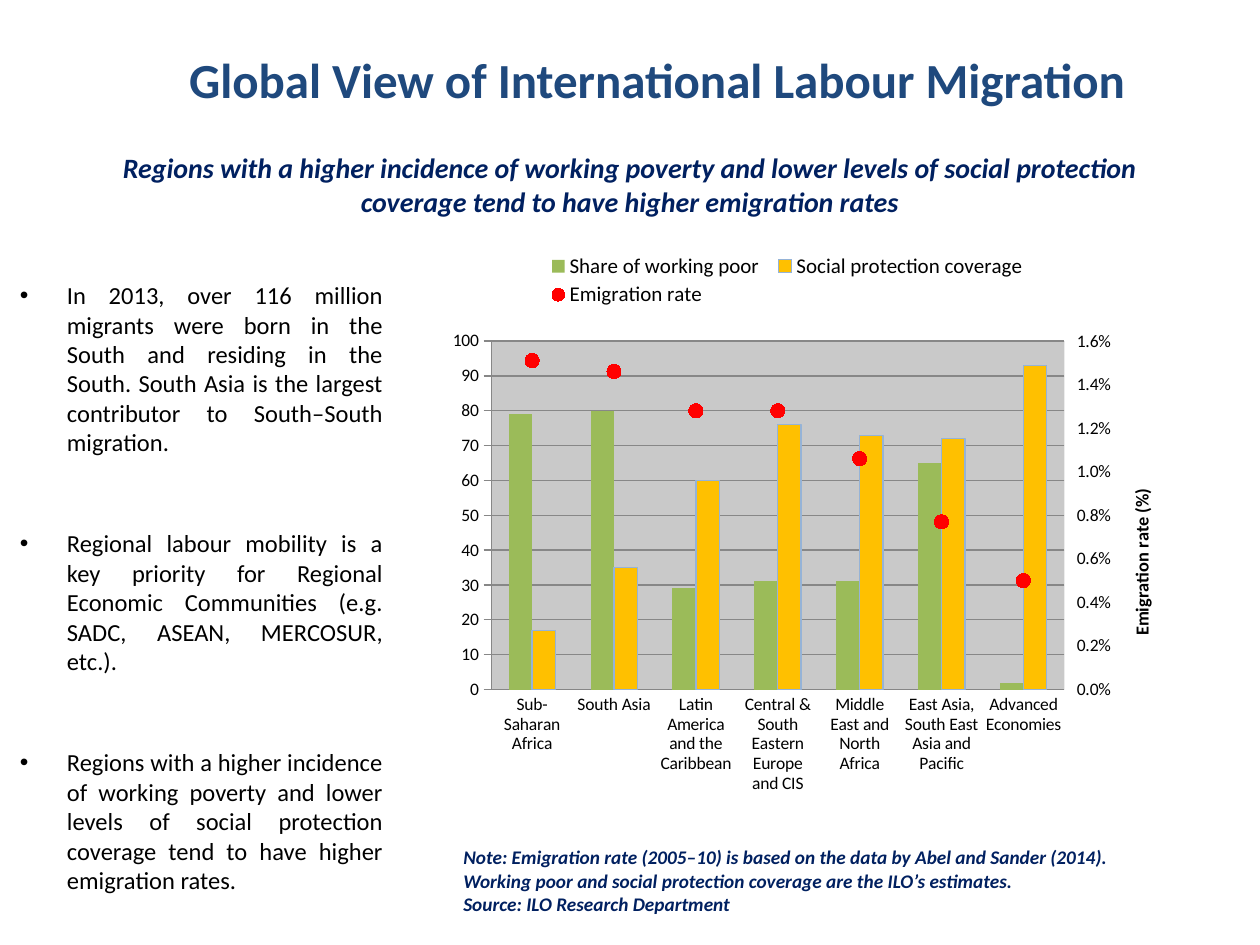
from copy import deepcopy

from pptx import Presentation
from pptx.chart.axis import CategoryAxis, ValueAxis
from pptx.chart.data import CategoryChartData
from pptx.dml.color import RGBColor
from pptx.enum.chart import XL_CHART_TYPE, XL_LEGEND_POSITION, XL_MARKER_STYLE, XL_TICK_MARK
from pptx.enum.text import MSO_ANCHOR, PP_ALIGN
from pptx.oxml import parse_xml
from pptx.oxml.ns import nsdecls, qn
from pptx.util import Cm, Pt

BLACK = RGBColor(0x00, 0x00, 0x00)
BLUE = RGBColor(0x1F, 0x49, 0x7D)
NAVY = RGBColor(0x00, 0x20, 0x60)
GREEN = RGBColor(0x9B, 0xBB, 0x59)
AMBER = RGBColor(0xFF, 0xC0, 0x00)
PALE_BLUE = RGBColor(0x95, 0xB3, 0xD7)
RED = RGBColor(0xFF, 0x00, 0x00)
GREY = RGBColor(0x86, 0x86, 0x86)

FINDINGS = [
    "In 2013, over 116 million migrants were born in the South and residing in the South. "
    "South Asia is the largest contributor to South–South migration.",
    "Regional labour mobility is a key priority for Regional Economic Communities "
    "(e.g. SADC, ASEAN, MERCOSUR, etc.).",
    "Regions with a higher incidence of working poverty and lower levels of social "
    "protection coverage tend to have higher emigration rates.",
]
NOTES = [
    "Note: Emigration rate (2005–10) is based on the data by Abel and Sander (2014).",
    "Working poor and social protection coverage are the ILO’s estimates.",
    "Source: ILO Research Department",
]
REGIONS = [
    "Sub-Saharan Africa", "South Asia", "Latin America and the Caribbean",
    "Central & South Eastern Europe and CIS", "Middle East and North Africa",
    "East Asia, South East Asia and Pacific", "Advanced Economies",
]
WORKING_POOR = [79, 80, 29, 31, 31, 65, 2]
PROTECTION = [17, 35, 60, 76, 73, 72, 93]
EMIGRATION = [0.0151, 0.0146, 0.0128, 0.0128, 0.0106, 0.0077, 0.005]


def set_layout(parent, x, y, w, h, inner=False):
    """Place a legend or plot area by fractions of the chart's size."""
    for old in parent.findall(qn("c:layout")):
        parent.remove(old)
    target = '<c:layoutTarget val="inner"/>' if inner else ""
    layout = parse_xml(
        f'<c:layout {nsdecls("c")}><c:manualLayout>{target}'
        '<c:xMode val="edge"/><c:yMode val="edge"/>'
        f'<c:x val="{x}"/><c:y val="{y}"/><c:w val="{w}"/><c:h val="{h}"/>'
        "</c:manualLayout></c:layout>")
    parent.insert(0 if inner else 1, layout)


def move_to_right_axis(chart):
    """Turn the last series into a line on a second axis; return that axis."""
    area = chart._chartSpace.chart.plotArea
    bars = area.find(qn("c:barChart"))
    rate = bars.findall(qn("c:ser"))[-1]
    for bar_only in rate.findall(qn("c:invertIfNegative")):
        rate.remove(bar_only)
    lines = parse_xml(
        f'<c:lineChart {nsdecls("c")}><c:grouping val="standard"/><c:varyColors val="0"/>'
        '<c:marker val="1"/><c:axId val="5001"/><c:axId val="5002"/></c:lineChart>')
    lines.insert(2, rate)
    bars.addnext(lines)

    left = area.find(qn("c:valAx"))
    right, hidden = deepcopy(left), deepcopy(area.find(qn("c:catAx")))
    for axis, own, crossed in ((right, "5002", "5001"), (hidden, "5001", "5002")):
        axis.find(qn("c:axId")).set("val", own)
        axis.find(qn("c:crossAx")).set("val", crossed)
    right.find(qn("c:axPos")).set("val", "r")
    right.find(qn("c:crosses")).set("val", "max")
    left.addnext(right)
    right.addnext(hidden)
    CategoryAxis(hidden).visible = False
    return ValueAxis(right)


class SlideBuilder:
    font = "Calibri"

    def __init__(self, slide):
        self.slide = slide

    def style(self, font, size, color, bold=False, italic=False):
        font.name, font.size, font.bold, font.italic = self.font, Pt(size), bold, italic
        font.color.rgb = color

    def text(self, box, lines, size, color, bold=False, italic=False,
             align=PP_ALIGN.LEFT, margins=(0.25, 0.13)):
        """Add a text box; margins are (side, top) in centimetres."""
        frame = self.slide.shapes.add_textbox(*map(Cm, box)).text_frame
        frame.word_wrap = True
        frame.vertical_anchor = MSO_ANCHOR.TOP
        frame.margin_left = frame.margin_right = Cm(margins[0])
        frame.margin_top = Cm(margins[1])
        frame.text = "\n".join(lines)
        for paragraph in frame.paragraphs:
            paragraph.alignment = align
            for run in paragraph.runs:
                self.style(run.font, size, color, bold, italic)
        return frame

    def heading(self, box, title, subtitle):
        frame = self.text(box, [title, subtitle], 16, NAVY, bold=True, italic=True,
                          align=PP_ALIGN.CENTER, margins=(0.25, 0.25))
        top, below = frame.paragraphs
        self.style(top.runs[0].font, 28, BLUE, bold=True)
        top._p.get_or_add_pPr().set("marL", str(Cm(1.09)))
        below.space_before = Pt(24.4)

    def bullets(self, box, items):
        frame = self.text(box, items, 14, BLACK, align=PP_ALIGN.JUSTIFY, margins=(0.25, 1.36))
        for paragraph in frame.paragraphs:
            paragraph.space_after = Pt(41)
            properties = paragraph._p.get_or_add_pPr()
            properties.set("marL", str(Cm(0.95)))
            properties.set("indent", str(-Cm(0.95)))
            properties.append(parse_xml(f'<a:buFont {nsdecls("a")} typeface="Arial"/>'))
            properties.append(parse_xml(f'<a:buChar {nsdecls("a")} char="•"/>'))

    def value_axis(self, axis, title, top, step, number_format):
        axis.minimum_scale, axis.maximum_scale, axis.major_unit = 0, top, step
        axis.major_tick_mark = XL_TICK_MARK.OUTSIDE
        axis.format.line.fill.background()
        axis.tick_labels.number_format = number_format
        axis.tick_labels.number_format_is_linked = False
        frame = axis.axis_title.text_frame
        frame.text = title
        frame._txBody.bodyPr.set("rot", "-5400000")
        frame._txBody.bodyPr.set("vert", "horz")
        self.style(frame.paragraphs[0].runs[0].font, 10.5, BLACK, bold=True)

    def migration_chart(self, box):
        data = CategoryChartData(number_format="0")
        data.categories = REGIONS
        data.add_series("Share of working poor", WORKING_POOR)
        data.add_series("Social protection coverage", PROTECTION)
        data.add_series("Emigration rate", EMIGRATION, number_format="0.0%")
        chart = self.slide.shapes.add_chart(
            XL_CHART_TYPE.COLUMN_CLUSTERED, *map(Cm, box), data).chart
        self.style(chart.font, 10, BLACK)
        chart.has_title = False

        right_axis = move_to_right_axis(chart)
        self.value_axis(chart.value_axis, "Working poor and social protection coverage (%)",
                        100, 25, "0")
        self.value_axis(right_axis, "Emigration rate (%)", 0.016, 0.002, "0.0%")
        right_axis.has_major_gridlines = False
        chart.value_axis.major_gridlines.format.line.color.rgb = GREY
        chart.category_axis.major_tick_mark = XL_TICK_MARK.NONE
        chart.category_axis.format.line.color.rgb = GREY

        columns, points = chart.plots
        columns.gap_width, columns.overlap = 150, 0
        columns.vary_by_categories = False
        poor, protection = columns.series
        for series, color in ((poor, GREEN), (protection, AMBER)):
            series.format.fill.solid()
            series.format.fill.fore_color.rgb = color
        protection.format.line.color.rgb = PALE_BLUE
        protection.format.line.width = Pt(0.75)

        rate = points.series[0]
        rate.smooth = False
        rate.format.line.fill.background()
        rate.marker.style, rate.marker.size = XL_MARKER_STYLE.CIRCLE, 8
        rate.marker.format.fill.solid()
        rate.marker.format.fill.fore_color.rgb = RED
        rate.marker.format.line.color.rgb = RED

        chart.has_legend = True
        chart.legend.position = XL_LEGEND_POSITION.TOP
        chart.legend.include_in_layout = False
        self.style(chart.legend.font, 12, BLACK)
        set_layout(chart.legend._element, 0.18, 0.02, 0.65, 0.1)

        area = chart._chartSpace.chart.plotArea
        set_layout(area, 0.117, 0.17, 0.751, 0.575, inner=True)
        area.append(parse_xml(
            f'<c:spPr {nsdecls("c", "a")}><a:solidFill><a:srgbClr val="{BLACK}">'
            '<a:alpha val="21000"/></a:srgbClr></a:solidFill></c:spPr>'))


def main():
    deck = Presentation()
    deck.slide_width, deck.slide_height = Cm(25.4), Cm(19.05)
    builder = SlideBuilder(deck.slides.add_slide(deck.slide_layouts[6]))
    builder.heading(
        (1.27, 0.74, 22.86, 4.78), "Global View of International Labour Migration",
        "Regions with a higher incidence of working poverty and lower levels of social "
        "protection coverage tend to have higher emigration rates")
    builder.text((9.09, 16.92, 15.44, 2.13), NOTES, 11, NAVY, bold=True, italic=True)
    builder.migration_chart((8.1, 4.8, 15.39, 12.22))
    builder.bullets((0.15, 4.29, 7.82, 14.6), FINDINGS)
    deck.save("out.pptx")


if __name__ == "__main__":
    main()
